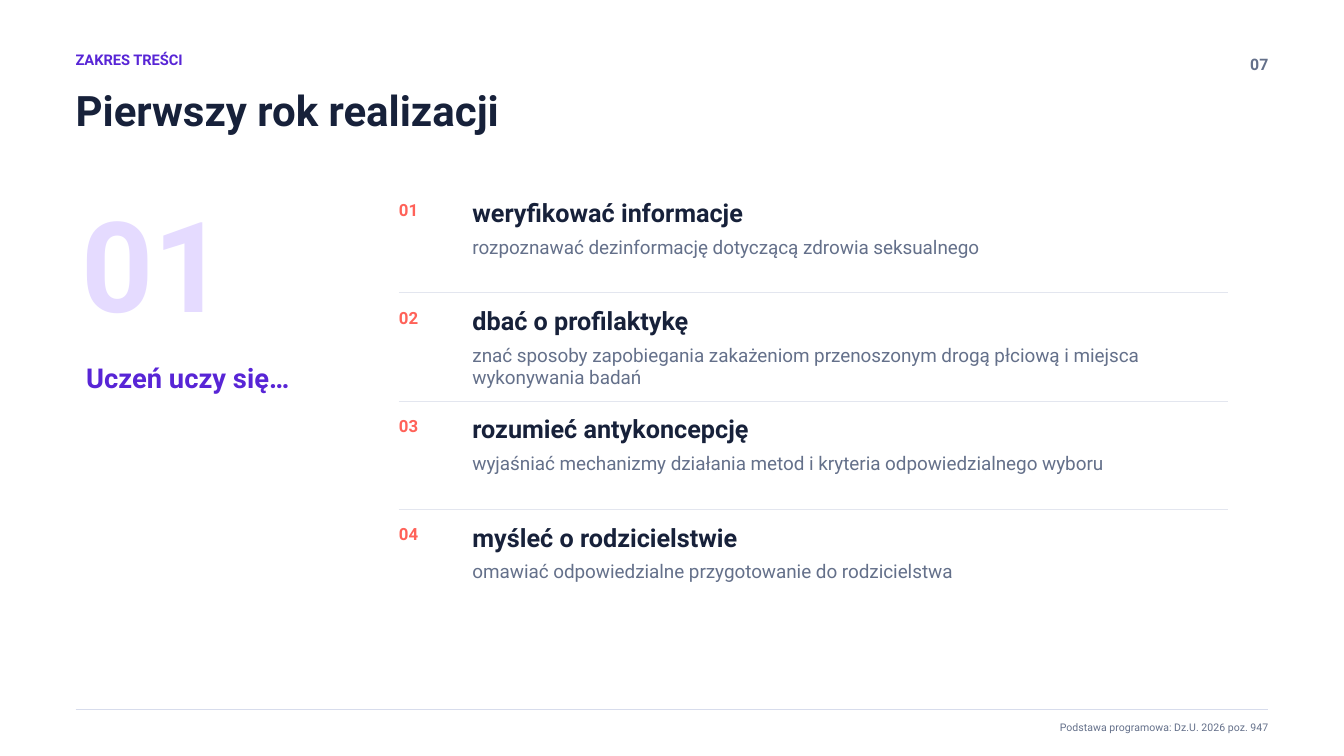
"""Builds the slide on the first year of the course."""
from lxml import etree
from pptx import Presentation
from pptx.dml.color import RGBColor
from pptx.enum.shapes import MSO_CONNECTOR
from pptx.enum.text import MSO_ANCHOR, MSO_AUTO_SIZE, PP_ALIGN
from pptx.oxml.ns import qn
from pptx.util import Pt

LEFT, RIGHT = PP_ALIGN.LEFT, PP_ALIGN.RIGHT
TOP = MSO_ANCHOR.TOP
FIXED = MSO_AUTO_SIZE.NONE
STRAIGHT = MSO_CONNECTOR.STRAIGHT

COLORS = {
    "violet": "5825D6",
    "lilac": "E5DBFF",
    "navy": "17213A",
    "gray": "64708A",
    "coral": "FF6259",
    "rule": "E3E6EF",
    "base": "D7DCEC",
}
GOALS = [
    ("weryfikować informacje",
     "rozpoznawać dezinformację dotyczącą zdrowia seksualnego"),
    ("dbać o profilaktykę",
     "znać sposoby zapobiegania zakażeniom przenoszonym drogą płciową "
     "i miejsca wykonywania badań"),
    ("rozumieć antykoncepcję",
     "wyjaśniać mechanizmy działania metod i kryteria odpowiedzialnego wyboru"),
    ("myśleć o rodzicielstwie",
     "omawiać odpowiedzialne przygotowanie do rodzicielstwa"),
]
PITCH = 77.25


class Deck:
    """Holds the style and the current slide."""

    def __init__(self, slide, font):
        self.slide = slide
        self.font = font

    def fill(self, shape, text, size, color, bold, align):
        """Fill a shape with one styled paragraph."""
        frame = shape.text_frame
        frame.word_wrap = True
        frame.auto_size = FIXED
        frame.vertical_anchor = TOP
        frame.margin_left = frame.margin_right = 0
        frame.margin_top = frame.margin_bottom = 0
        frame.text = text
        para = frame.paragraphs[0]
        para.alignment = align
        font = para.font
        font.name = self.font
        font.size = Pt(size)
        font.bold = bold
        font.color.rgb = RGBColor.from_string(COLORS[color])

    def title(self, text, box, size, color):
        """Place and style the title."""
        shape = self.slide.shapes.title
        shape.left, shape.top, shape.width, shape.height = map(Pt, box)
        self.fill(shape, text, size, color, True, LEFT)

    def text(self, text, box, size, color, bold=True, align=LEFT):
        """Add a text box."""
        shape = self.slide.shapes.add_textbox(*map(Pt, box))
        self.fill(shape, text, size, color, bold, align)

    def line(self, start, end, y, color):
        """Add a level rule."""
        rule = self.slide.shapes.add_connector(
            STRAIGHT, Pt(start), Pt(y), Pt(end), Pt(y))
        rule.line.width = Pt(0.75)
        rule.line.color.rgb = RGBColor.from_string(COLORS[color])
        etree.SubElement(rule._element.spPr, qn("a:effectLst"))

    def goal(self, index, head, detail):
        """Add one numbered goal."""
        y = 141 + index * PITCH
        self.text(f"{index + 1:02}", (285, y + 1.5, 36, 18.75), 12, "coral")
        self.text(head, (337.5, y, 510, 22.5), 18, "navy")
        self.text(detail, (337.5, y + 27, 540, 39), 13.5, "gray", False)


def main():
    """Build and save the slide."""
    show = Presentation()
    show.slide_width, show.slide_height = Pt(960), Pt(540)
    deck = Deck(show.slides.add_slide(show.slide_layouts[5]), "Roboto")

    deck.text("ZAKRES TREŚCI", (54, 36, 525, 18), 10.5, "violet")
    deck.title("Pierwszy rok realizacji", (54, 60, 780, 58.5), 30, "navy")
    deck.text("07", (870, 39, 36, 19.5), 11.3, "gray", align=RIGHT)
    deck.text("01", (58, 133, 195, 110), 90, "lilac")
    deck.text("Uczeń uczy się…", (61.5, 258, 195, 33), 19.5, "violet")

    for index, (head, detail) in enumerate(GOALS):
        if index:
            deck.line(285, 877.5, 132 + index * PITCH, "rule")
        deck.goal(index, head, detail)

    deck.line(54, 906, 507, "base")
    deck.text("Podstawa programowa: Dz.U. 2026 poz. 947",
              (382.5, 515, 523.5, 13.5), 7.5, "gray", False, RIGHT)
    show.save("out.pptx")


if __name__ == "__main__":
    main()
